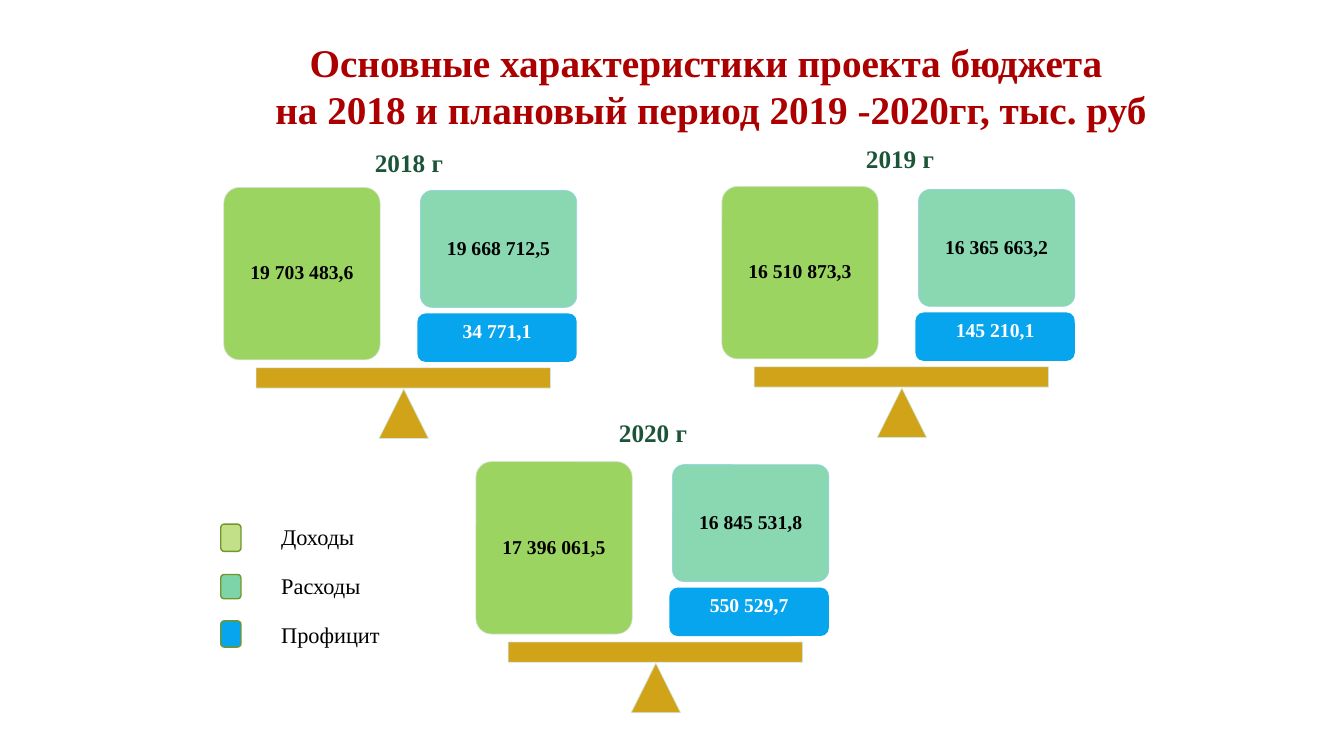
from pptx import Presentation
from pptx.dml.color import RGBColor
from pptx.enum.shapes import MSO_SHAPE as Geo
from pptx.enum.text import MSO_ANCHOR as Anchor, MSO_AUTO_SIZE as Fit, PP_ALIGN as Align
from pptx.oxml.ns import qn
from pptx.util import Inches, Pt
from lxml.etree import SubElement

FACE = "Times New Roman"
GOLD, MINT, BLUE = "CC9900", "7DD4A9", "08A5EF"

# income, expenses, surplus; then the scale's corner and the year label's corner
YEARS = [
    ("2018 г", "19 703 483,6", "19 668 712,5", "34 771,1", (2.22, 1.86), (3.62, 1.41)),
    ("2019 г", "16 510 873,3", "16 365 663,2", "145 210,1", (7.16, 1.85), (8.49, 1.37)),
    ("2020 г", "17 396 061,5", "16 845 531,8", "550 529,7", (4.72, 4.58), (6.04, 4.09)),
]
LEGEND = [
    ("Доходы", "C2E088", 5.2, 0.27, 5.14),
    ("Расходы", MINT, 5.7, 0.24, 5.63),
    ("Профицит", BLUE, 6.16, 0.26, 6.11),
]


def color(code):
    return RGBColor.from_string(code)


def paint(fill, code, alpha=100):
    fill.solid()
    fill.fore_color.rgb = color(code)
    if alpha < 100:
        tone = next(fill._xPr.iter(qn("a:srgbClr")))
        SubElement(tone, qn("a:alpha")).set("val", str(alpha * 1000))


def write(frame, lines, size, code, bold=False, align=Align.LEFT, **layout):
    """Fill a text frame; layout holds further text frame values."""
    layout = {"word_wrap": False, "auto_size": Fit.NONE, "vertical_anchor": Anchor.TOP} | layout
    for name, value in layout.items():
        setattr(frame, name, value)
    frame.text = "\n".join(lines)
    style = {"name": FACE, "size": Pt(size), "bold": bold}
    for par in frame.paragraphs:
        par.alignment = align
        for run in par.runs:
            run.font.color.rgb = color(code)
            for name, value in style.items():
                setattr(run.font, name, value)


def label(shapes, text, left, top, width, height, size, code, bold=False):
    box = shapes.add_textbox(Inches(left), Inches(top), Inches(width), Inches(height))
    write(box.text_frame, [text], size, code, bold)


def block(shapes, geo, at, fill, line=None, weight=0.5, alpha=100, adj=None):
    shape = shapes.add_shape(geo, *map(Inches, at))
    shape.shadow.inherit = False
    paint(shape.fill, fill, alpha)
    if line:
        paint(shape.line.fill, line, alpha)
        shape.line.width = Pt(weight)
    else:
        shape.line.fill.background()
    if adj:
        shape.adjustments[0] = adj
    return shape


def amount(shape, text, code="000000", anchor=Anchor.MIDDLE):
    sides = ("left", "top", "right", "bottom")
    pads = {f"margin_{side}": Inches(0.06) for side in sides}
    write(shape.text_frame, [text], 14, code, True, Align.CENTER,
          word_wrap=True, vertical_anchor=anchor, **pads)
    shape.text_frame.paragraphs[0].line_spacing = 0.9


def scale(slide, income, expense, surplus, left, top):
    """Draw a balance with income on one side, expenses and surplus on the other."""
    shapes = slide.shapes.add_group_shape().shapes

    def part(geo, x, y, width, height, fill, line=None, **kind):
        return block(shapes, geo, (left + x, top + y, width, height), fill, line, **kind)

    soft = {"alpha": 90}
    card = soft | {"adj": 0.1}
    amount(part(Geo.ROUNDED_RECTANGLE, 0, 0, 1.55, 1.71, "92D050", "D3E1CE", **card), income)
    amount(part(Geo.ROUNDED_RECTANGLE, 1.95, 0.03, 1.55, 1.16, MINT, "95D1E2", **card), expense)
    part(Geo.ISOSCELES_TRIANGLE, 1.54, 2, 0.49, 0.49, GOLD, "CFE9E0", **soft)
    part(Geo.RECTANGLE, 0.32, 1.79, 2.92, 0.2, GOLD, "D0E5ED", **soft)
    amount(part(Geo.ROUNDED_RECTANGLE, 1.92, 1.25, 1.58, 0.48, BLUE), surplus, "FFFFFF", Anchor.TOP)


def heading(slide):
    title = slide.shapes.title
    place = {"left": 2.58, "top": 0.33, "width": 8.94, "height": 1.04}
    for name, value in place.items():
        setattr(title, name, Inches(value))
    lines = ["Основные характеристики проекта бюджета ",
             "на 2018 и плановый период 2019 -2020гг, тыс. руб"]
    write(title.text_frame, lines, 28, "AC0000", True, Align.CENTER)


def main():
    deck = Presentation()
    deck.slide_width, deck.slide_height = Inches(13.33), Inches(7.5)
    slide = deck.slides.add_slide(deck.slide_layouts[5])
    heading(slide)
    for year, income, expense, surplus, corner, spot in YEARS:
        scale(slide, income, expense, surplus, *corner)
        label(slide.shapes, year, *spot, 0.88, 0.4, 18, "1C5438", True)
    for name, fill, top, height, base in LEGEND:
        block(slide.shapes, Geo.ROUNDED_RECTANGLE, (2.19, top, 0.2, height), fill, "719629", 1)
        label(slide.shapes, name, 2.69, base, 1.19, 0.37, 16, "000000")
    deck.save("out.pptx")


if __name__ == "__main__":
    main()
